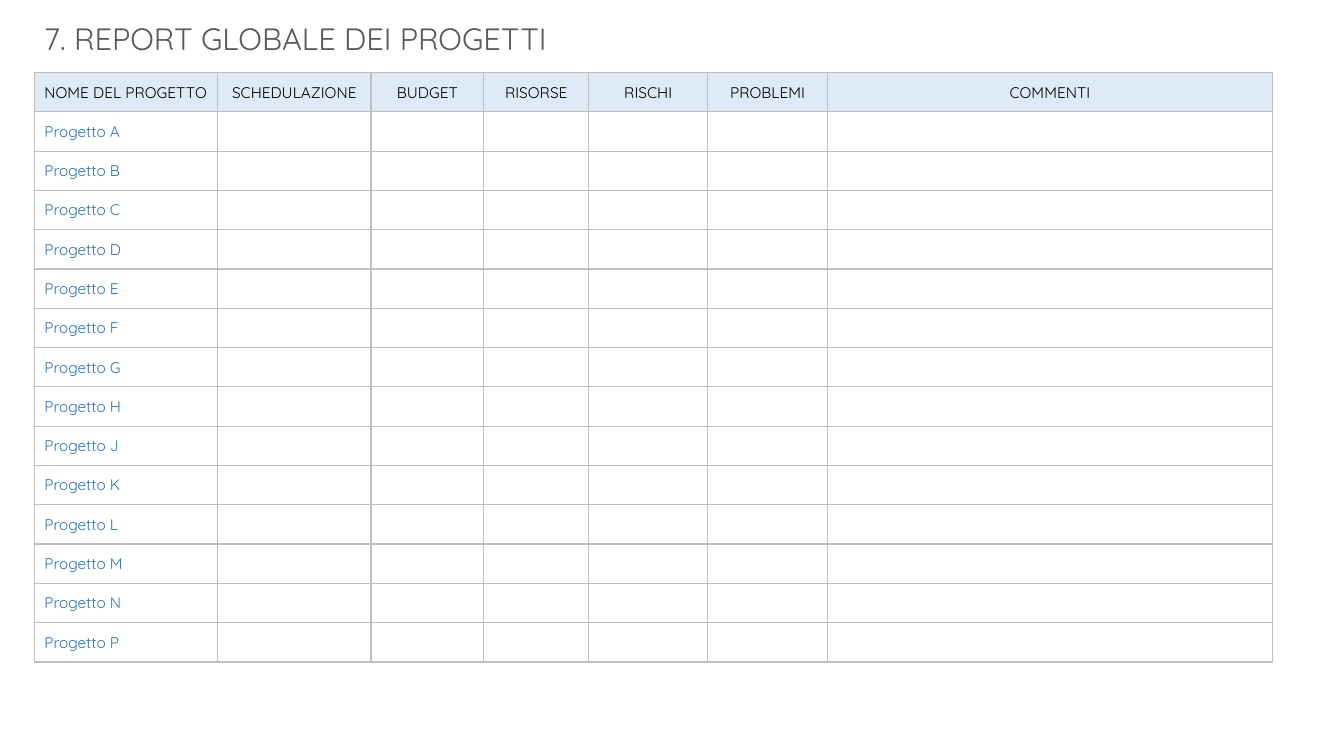
from lxml import etree
from pptx import Presentation
from pptx import util as u
from pptx.dml.color import RGBColor
from pptx.enum import text
from pptx.oxml import ns

COLORS = {
    "title": "595959", "header_text": "000000", "project_text": "2E75B6",
    "header_fill": "DEEBF7", "body_fill": "FFFFFF", "border": "BFBFBF",
}
FONT = "Quicksand"
COLUMNS = {
    "NOME DEL PROGETTO": 1.82, "SCHEDULAZIONE": 1.52, "BUDGET": 1.12,
    "RISORSE": 1.04, "RISCHI": 1.18, "PROBLEMI": 1.19, "COMMENTI": 4.41,
}
PROJECTS = "ABCDEFGHJKLMNP"
LEFT, TABLE_TOP, TABLE_HEIGHT = 0.34, 0.72, 5.85


def write(paragraph, content, size, color):
    run = paragraph.add_run()
    run.text = content
    for name, value in {"name": FONT, "size": u.Pt(size), "bold": False}.items():
        setattr(run.font, name, value)
    run.font.color.rgb = RGBColor.from_string(COLORS[color])


def add_borders(cell):
    properties = cell._tc.get_or_add_tcPr()
    for side in ("lnL", "lnR", "lnT", "lnB"):
        line = etree.SubElement(properties, ns.qn(f"a:{side}"), w=str(u.Pt(1)))
        fill = etree.SubElement(line, ns.qn("a:solidFill"))
        etree.SubElement(fill, ns.qn("a:srgbClr"), val=COLORS["border"])


presentation = Presentation()
presentation.slide_width = u.Inches(13.33)
presentation.slide_height = u.Inches(7.5)
slide = presentation.slides.add_slide(presentation.slide_layouts[6])

# Project table
rows = [list(COLUMNS)] + [[f"Progetto {letter}"] for letter in PROJECTS]
table = slide.shapes.add_table(
    len(rows), len(COLUMNS), u.Inches(LEFT), u.Inches(TABLE_TOP),
    u.Inches(sum(COLUMNS.values())), u.Inches(TABLE_HEIGHT)).table
table.horz_banding = False
for column, width in zip(table.columns, COLUMNS.values()):
    column.width = u.Inches(width)

cell_format = {
    "margin_left": u.Inches(0.1), "margin_right": u.Inches(0.1),
    "margin_top": 0, "margin_bottom": 0,
    "vertical_anchor": text.MSO_ANCHOR.MIDDLE,
}
for row_index, labels in enumerate(rows):
    table.rows[row_index].height = u.Inches(TABLE_HEIGHT / len(rows))
    part = "body" if row_index else "header"
    text_color = "project_text" if row_index else "header_text"
    for column_index in range(len(COLUMNS)):
        cell = table.cell(row_index, column_index)
        for name, value in cell_format.items():
            setattr(cell, name, value)
        add_borders(cell)
        cell.fill.solid()
        cell.fill.fore_color.rgb = RGBColor.from_string(COLORS[f"{part}_fill"])
        if column_index < len(labels):
            paragraph = cell.text_frame.paragraphs[0]
            write(paragraph, labels[column_index], 11, text_color)
            if column_index:
                paragraph.alignment = text.PP_ALIGN.CENTER

# Title
title = slide.shapes.add_textbox(
    u.Inches(LEFT), u.Inches(0.15), u.Inches(5.3), u.Inches(0.47))
title.text_frame.word_wrap = True
write(title.text_frame.paragraphs[0], "7. REPORT GLOBALE DEI PROGETTI", 22, "title")

presentation.save("out.pptx")
